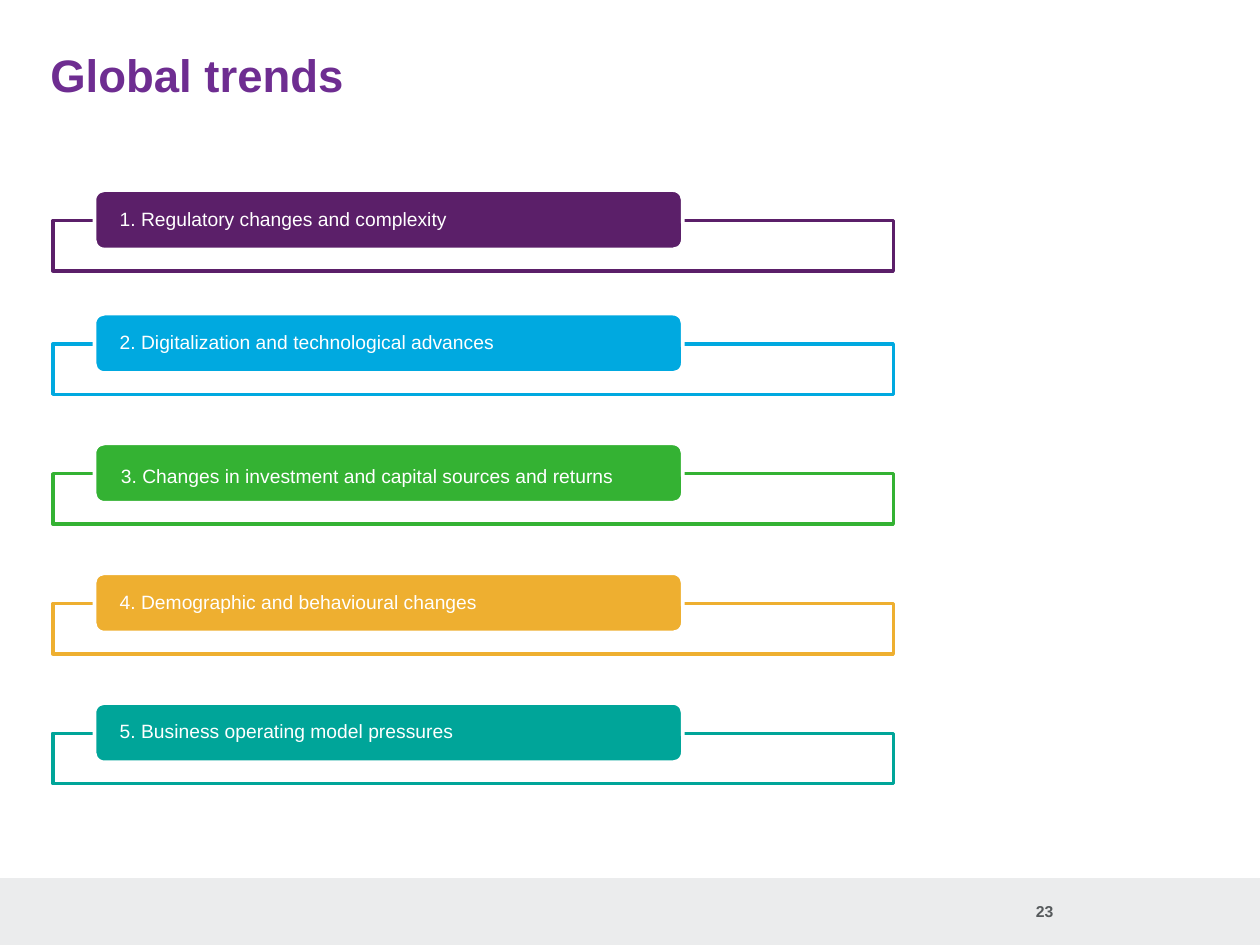
from lxml.etree import SubElement
from pptx import Presentation
from pptx.dml.color import RGBColor
from pptx.enum.shapes import MSO_SHAPE as Shape
from pptx.enum.text import MSO_ANCHOR as Anchor, PP_ALIGN as Align
from pptx.oxml.ns import qn
from pptx.util import Inches, Pt

WHITE = RGBColor(0xFF, 0xFF, 0xFF)
BAND = RGBColor(0xEB, 0xEC, 0xED)
GREY = RGBColor(0x56, 0x5A, 0x5C)
TITLE = RGBColor(0x6E, 0x2D, 0x91)
PLUM = RGBColor(0x5B, 0x1F, 0x69)
BLUE = RGBColor(0x00, 0xA9, 0xE0)
GREEN = RGBColor(0x34, 0xB2, 0x33)
AMBER = RGBColor(0xEE, 0xAF, 0x30)
TEAL = RGBColor(0x00, 0xA5, 0x99)

LEFT, WIDTH, HEIGHT = 0.42, 6.67, 0.4
# Top of the frame, colour, label, and the label's shift right and down
TRENDS = [
    (1.75, PLUM, "1. Regulatory changes and complexity", (0, 0)),
    (2.73, BLUE, "2. Digitalization and technological advances", (0, 0)),
    (3.76, GREEN, "3. Changes in investment and capital sources and returns", (0.01, 0.03)),
    (4.79, AMBER, "4. Demographic and behavioural changes", (0, 0)),
    (5.82, TEAL, "5. Business operating model pressures", (0, 0)),
]


def add_box(shapes, kind, box, fill, line=None):
    shape = shapes.add_shape(kind, *map(Inches, box))
    shape.shadow.inherit = False
    shape.fill.solid()
    shape.fill.fore_color.rgb = fill
    if line is None:
        shape.line.fill.background()
    else:
        shape.line.color.rgb = line
        shape.line.width = Pt(2)
    return shape


def add_text(shapes, box, text, size, color, bold=False, side=0, spacing=1.0,
             align=Align.LEFT, anchor=Anchor.MIDDLE, wrap=True):
    frame = shapes.add_textbox(*map(Inches, box)).text_frame
    layout = {"margin_left": Inches(side), "margin_right": Inches(side),
              "margin_top": 0, "margin_bottom": 0,
              "vertical_anchor": anchor, "word_wrap": wrap}
    for name, value in layout.items():
        setattr(frame, name, value)
    para = frame.paragraphs[0]
    para.alignment, para.line_spacing = align, spacing
    run = para.add_run()
    run.text = text
    for name, value in {"name": "Arial", "size": Pt(size), "bold": bold}.items():
        setattr(run.font, name, value)
    run.font.color.rgb = color


def set_alpha(shape, percent):
    color = shape.fill._xPr.find(qn("a:solidFill"))[0]
    SubElement(color, qn("a:alpha"), val=str(percent * 1000))


def add_trend(slide, box, color, label, shift):
    """Draw an outlined frame with a coloured tab across its top edge."""
    x, y, w, h = box
    right, down = shift
    shapes = slide.shapes.add_group_shape().shapes
    frame = add_box(shapes, Shape.RECTANGLE, box, WHITE, color)
    set_alpha(frame, 90)
    tab = (x + 0.33, y - 0.24, 0.7 * w, h + 0.07)
    add_box(shapes, Shape.ROUNDED_RECTANGLE, tab, color, WHITE)
    inner = (x + 0.35 + right, y - 0.22 + down, 0.7 * w - 0.04, h + 0.03)
    add_text(shapes, inner, label, 11, WHITE, side=0.18, spacing=0.9)


def add_footer(slide, box):
    x, y, w, h = box
    add_box(slide.shapes, Shape.RECTANGLE, box, BAND)
    number = (x + 8.2, y + 0.18, 0.16, 0.16)
    add_text(slide.shapes, number, "23", 9, GREY, bold=True,
             align=Align.RIGHT, wrap=False)


def add_title(slide, box):
    add_text(slide.shapes, box, "Global trends", 26, TITLE, bold=True,
             anchor=Anchor.TOP)


def main():
    deck = Presentation()
    deck.slide_width, deck.slide_height = Inches(10), Inches(7.5)
    slide = deck.slides.add_slide(deck.slide_layouts[6])
    add_footer(slide, (0, 6.97, 10, 0.53))
    add_title(slide, (0.4, 0.37, 9.2, 0.43))
    for top, color, label, shift in TRENDS:
        add_trend(slide, (LEFT, top, WIDTH, HEIGHT), color, label, shift)
    deck.save("out.pptx")


if __name__ == "__main__":
    main()
